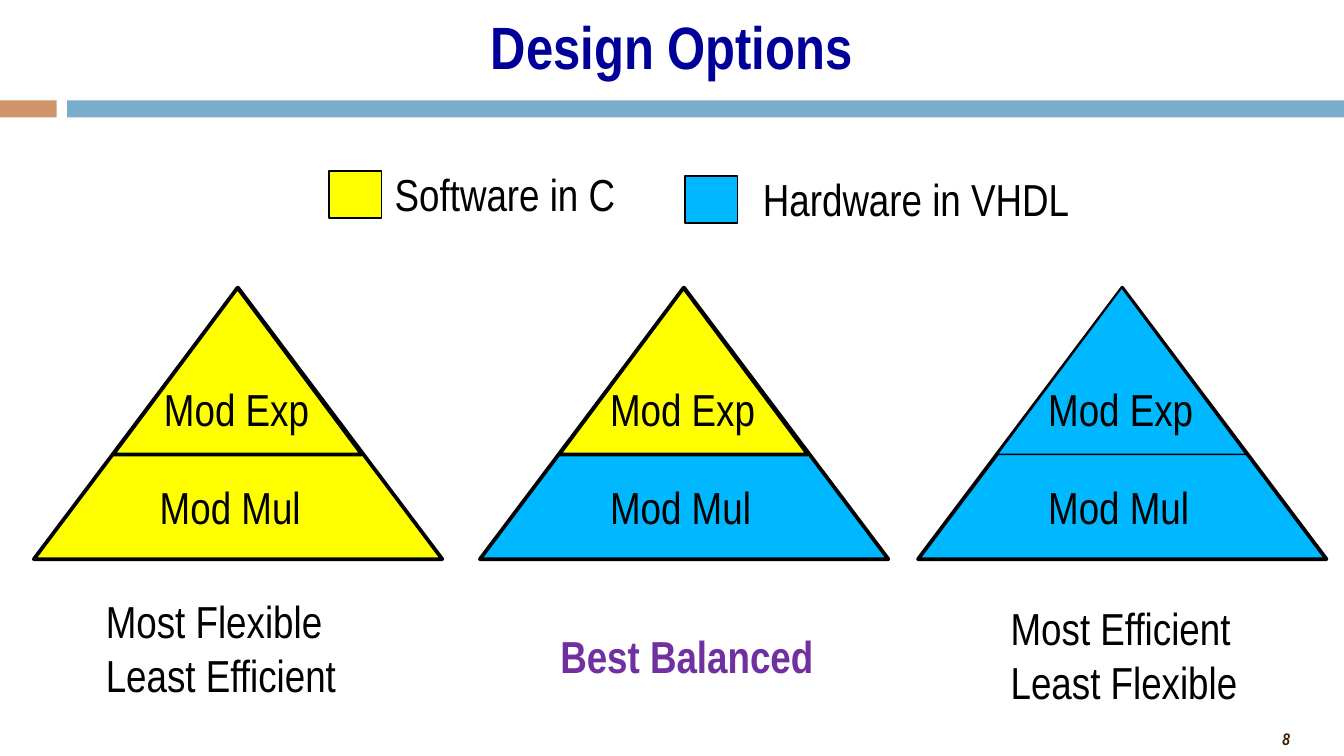
from pptx import Presentation
from pptx.dml.color import RGBColor
from pptx.enum.shapes import MSO_SHAPE
from pptx.enum.text import MSO_ANCHOR, MSO_AUTO_SIZE, PP_ALIGN
from pptx.util import Cm, Pt

RECTANGLE = MSO_SHAPE.RECTANGLE
TRIANGLE = MSO_SHAPE.ISOSCELES_TRIANGLE
MIDDLE = MSO_ANCHOR.MIDDLE
NO_AUTOFIT = MSO_AUTO_SIZE.NONE
GROW = MSO_AUTO_SIZE.SHAPE_TO_FIT_TEXT
LEFT, CENTER, RIGHT = PP_ALIGN.LEFT, PP_ALIGN.CENTER, PP_ALIGN.RIGHT

BLACK = RGBColor(0x00, 0x00, 0x00)
NAVY = RGBColor(0x00, 0x00, 0x99)
PURPLE = RGBColor(0x70, 0x30, 0xA0)
BROWN = RGBColor(0x40, 0x20, 0x00)
SOFTWARE = RGBColor(0xFF, 0xFF, 0x00)
HARDWARE = RGBColor(0x00, 0xB8, 0xFF)
ACCENT_ORANGE = RGBColor(0xCF, 0x94, 0x67)
ACCENT_BLUE = RGBColor(0x7A, 0xAD, 0xCC)

FONT = "Arial Narrow"
THIN, THICK = 0.75, 2
PYRAMID_TOP = 5.44

# left edge, upper fill, lower fill, upper outline, offset of the lower label
PYRAMIDS = [
    (0.64, SOFTWARE, SOFTWARE, THICK, 2.13),
    (9.07, SOFTWARE, HARDWARE, THICK, 2.21),
    (17.35, HARDWARE, HARDWARE, THIN, 2.21),
]

# swatch left and top, fill, label, label left and width
LEGEND = [
    (6.22, 3.23, SOFTWARE, "Software in C", 7.21, 4.72),
    (12.95, 3.33, HARDWARE, "Hardware in VHDL", 14.17, 6.38),
]


def add_run(paragraph, text, size, color, bold=False, italic=False):
    run = paragraph.add_run()
    run.text = text
    font = run.font
    font.name, font.size = FONT, Pt(size)
    font.bold, font.italic = bold, italic
    font.color.rgb = color


def add_filled_shape(slide, kind, left, top, width, height, fill, outline=None):
    shape = slide.shapes.add_shape(kind, Cm(left), Cm(top), Cm(width), Cm(height))
    shape.shadow.inherit = False
    shape.fill.solid()
    shape.fill.fore_color.rgb = fill
    if outline is None:
        shape.line.fill.background()
    else:
        shape.line.color.rgb = BLACK
        shape.line.width = Pt(outline)


def add_label(slide, lines, left, top, width, height=1.27, size=24,
              color=BLACK, bold=False, italic=False, align=LEFT, wrap=False):
    box = slide.shapes.add_textbox(Cm(left), Cm(top), Cm(width), Cm(height))
    frame = box.text_frame
    frame.word_wrap = wrap
    frame.auto_size = GROW
    for index, line in enumerate(lines):
        paragraph = frame.add_paragraph() if index else frame.paragraphs[0]
        paragraph.alignment = align
        add_run(paragraph, line, size, color, bold, italic)
    return frame


def format_title(slide, text):
    title = slide.shapes.title
    title.left, title.top = Cm(1.07), Cm(0.15)
    title.width, title.height = Cm(23.26), Cm(1.57)
    frame = title.text_frame
    frame.auto_size = NO_AUTOFIT
    frame.vertical_anchor = MIDDLE
    paragraph = frame.paragraphs[0]
    paragraph.alignment = CENTER
    paragraph.line_spacing = 0.94
    add_run(paragraph, text, 32, NAVY, bold=True)


def add_page_number(slide, number):
    frame = add_label(slide, [number], 19.05, 13.67, 5.51, 0.58, size=9,
                      color=BROWN, bold=True, italic=True, align=RIGHT, wrap=True)
    frame.margin_left = frame.margin_right = Cm(0.18)
    frame.margin_top = frame.margin_bottom = Cm(0.1)


def add_pyramid(slide, left, upper_fill, lower_fill, upper_outline, lower_offset):
    """Draw the whole triangle, then its smaller top part over it."""
    add_filled_shape(slide, TRIANGLE, left, PYRAMID_TOP, 7.72, 5.13, lower_fill, THICK)
    add_filled_shape(slide, TRIANGLE, left + 1.5, PYRAMID_TOP, 4.7, 3.15,
                     upper_fill, upper_outline)
    add_label(slide, ["Mod Exp"], left + 2.21, 7.09, 3.28)
    add_label(slide, ["Mod Mul"], left + lower_offset, 8.94, 3.2)


def main():
    prs = Presentation()
    prs.slide_width, prs.slide_height = Cm(25.4), Cm(14.29)
    slide = prs.slides.add_slide(prs.slide_layouts[5])

    add_page_number(slide, "8")
    add_filled_shape(slide, RECTANGLE, 0, 1.9, 1.07, 0.32, ACCENT_ORANGE)
    add_filled_shape(slide, RECTANGLE, 1.27, 1.9, 24.13, 0.32, ACCENT_BLUE)
    format_title(slide, "Design Options")

    for pyramid in PYRAMIDS:
        add_pyramid(slide, *pyramid)

    for left, top, fill, label, label_left, label_width in LEGEND:
        add_filled_shape(slide, RECTANGLE, left, top, 0.99, 0.89, fill, THIN)
        add_label(slide, [label], label_left, top - 0.21, label_width)

    add_label(slide, ["Most Flexible", "Least Efficient"], 1.75, 11.1, 4.93, 2.31)
    add_label(slide, ["Most Efficient", "Least Flexible"], 18.85, 11.23, 4.85, 2.31)
    add_label(slide, ["Best Balanced"], 10.34, 11.76, 5.36, color=PURPLE, bold=True)

    prs.save("out.pptx")


if __name__ == "__main__":
    main()
